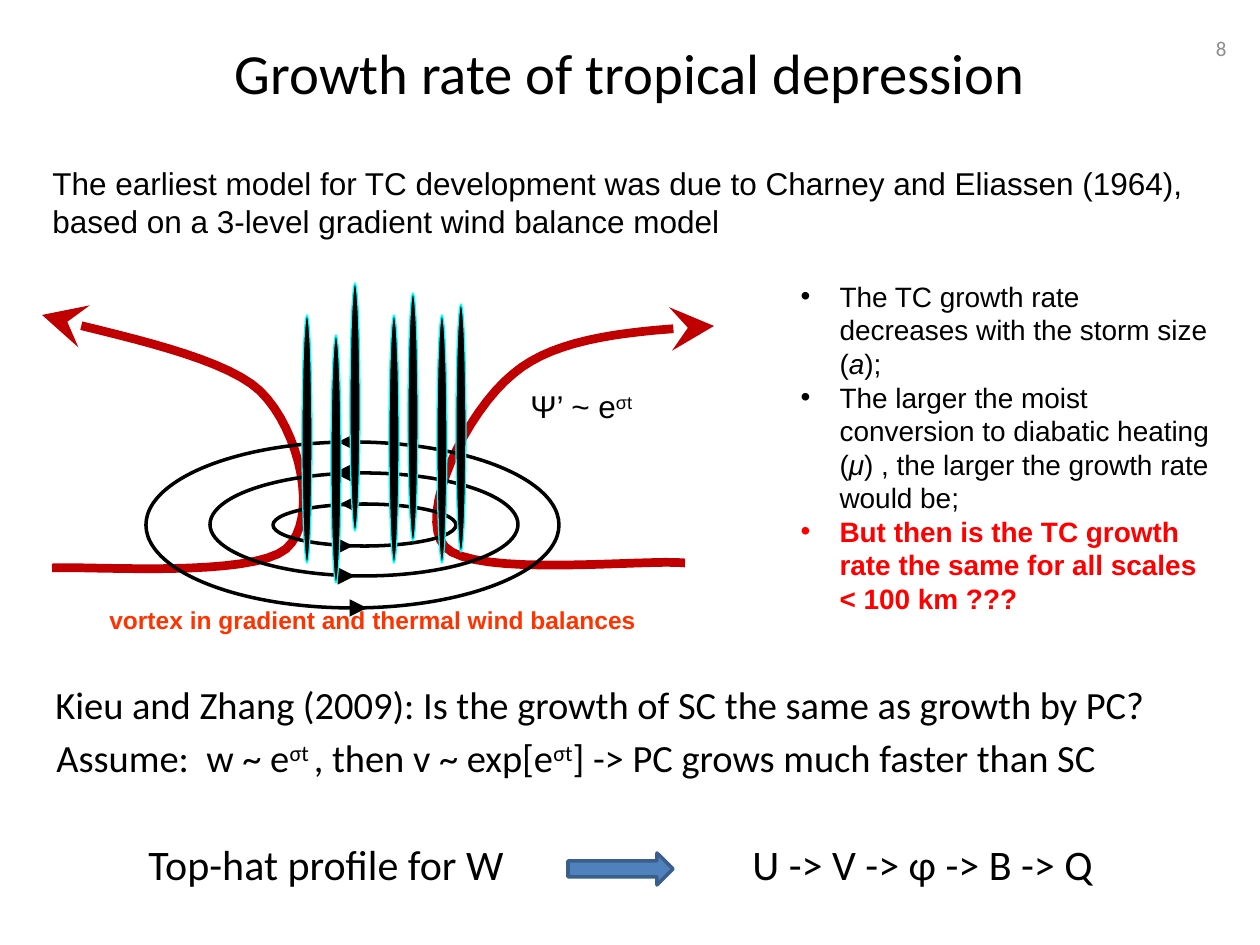
import pptx
import pptx.util
from lxml import etree
from pptx.dml.color import RGBColor
from pptx.enum.shapes import MSO_CONNECTOR, MSO_SHAPE
from pptx.enum.text import MSO_ANCHOR, PP_ALIGN
from pptx.oxml.ns import qn

PX = 914400 / 126
BLACK = RGBColor(0x00, 0x00, 0x00)
GRAY = RGBColor(0x8C, 0x8C, 0x8C)
DARK_RED = RGBColor(0xC0, 0x00, 0x00)
RED = RGBColor(0xFF, 0x00, 0x00)
ORANGE = RGBColor(0xFF, 0x33, 0x00)
CYAN = RGBColor(0x00, 0xFF, 0xFF)
BLUE = RGBColor(0x4F, 0x81, 0xBD)
NAVY = RGBColor(0x3A, 0x5F, 0x8C)

BODY = {"name": "Arial", "size": 18}
BULLET = {"name": "Arial", "size": 16}
QUESTION = BULLET | {"bold": True, "color": RED}
CAPTION = {"name": "Arial", "size": 14, "bold": True, "color": ORANGE}
STUDY = {"name": "Calibri", "size": 22}
PROFILE = {"name": "Calibri", "size": 24}
ITALIC = {"italic": True}
SUPERSCRIPT = {"superscript": True}

# Each stream is a start point followed by Bezier control points, in px.
INFLOW_RIGHT = [(685, 563), (646, 559), (474, 578), (445, 547), (416, 515),
                (467, 411), (513, 374), (557, 336), (635, 331), (714, 326)]
INFLOW_LEFT = [(52, 568), (91, 566), (251, 578), (286, 549), (320, 519),
               (300, 430), (260, 391), (219, 352), (87, 330), (42, 315)]
# Ring box, then the x ranges of its bottom and top arrows.
RINGS = [((146, 442, 413, 166), (346, 367), (357, 338)),
         ((210, 473, 308, 103), (341, 355), (348, 334)),
         ((273, 504, 183, 42), (344, 353), (349, 340))]
TOWERS = [(302, 315), (331, 335), (350, 283), (389, 315),
          (408, 293), (437, 315), (456, 304)]
TOWER_SIZE = (10, 248)


def emu(*lengths):
    return [pptx.util.Emu(round(length * PX)) for length in lengths]


def write_runs(paragraph, runs, base):
    """Add (text, format) pairs, each format laid over the base format."""
    for text, extra in runs:
        run = paragraph.add_run()
        run.text = text
        values = {"color": BLACK} | base | extra
        run.font.color.rgb = values.pop("color")
        if values.pop("superscript", False):
            run.font._element.set("baseline", "30000")
        values["size"] = pptx.util.Pt(values["size"])
        for name, value in values.items():
            setattr(run.font, name, value)


def place(holder, box):
    for name, value in zip(("left", "top", "width", "height"), emu(*box)):
        setattr(holder, name, value)


def add_text(slide, box, runs, base, align=PP_ALIGN.LEFT, anchor=MSO_ANCHOR.TOP):
    frame = slide.shapes.add_textbox(*emu(*box)).text_frame
    frame.word_wrap = True
    frame.vertical_anchor = anchor
    frame.paragraphs[0].alignment = align
    write_runs(frame.paragraphs[0], runs, base)


def fill_title(slide, text):
    title = slide.shapes.title
    place(title, (63, 38, 1134, 67))
    title.text_frame.vertical_anchor = MSO_ANCHOR.MIDDLE
    paragraph = title.text_frame.paragraphs[0]
    paragraph.alignment = PP_ALIGN.CENTER
    write_runs(paragraph, [(text, {})], {"name": "Calibri", "size": 32.4})


def fill_bullets(slide, box, items):
    body = slide.placeholders[1]
    place(body, box)
    frame = body.text_frame
    for index, (runs, base) in enumerate(items):
        paragraph = frame.add_paragraph() if index else frame.paragraphs[0]
        paragraph.space_before = pptx.util.Pt(0)
        indent = emu(39)[0]
        properties = paragraph._p.get_or_add_pPr()
        properties.set("marL", str(indent))
        properties.set("indent", str(-indent))
        write_runs(paragraph, runs, base)


def style_line(line, color, width, head=None):
    line.color.rgb = color
    line.width = pptx.util.Pt(width)
    if head:
        etree.SubElement(line._get_or_add_ln(), qn("a:tailEnd"),
                         type=head, w="lg", len="lg")


def add_shape(slide, kind, box, fill, color, width):
    shape = slide.shapes.add_shape(kind, *emu(*box))
    shape.shadow.inherit = False
    if fill is None:
        shape.fill.background()
    else:
        shape.fill.solid()
        shape.fill.fore_color.rgb = fill
    style_line(shape.line, color, width)


def bezier_points(controls, steps=16):
    """Sample joined cubic Bezier segments, leaving out the start point."""
    for first in range(0, len(controls) - 1, 3):
        segment = controls[first:first + 4]
        for step in range(1, steps + 1):
            t = step / steps
            weights = ((1 - t) ** 3, 3 * t * (1 - t) ** 2,
                       3 * t ** 2 * (1 - t), t ** 3)
            yield tuple(sum(w * p[axis] for w, p in zip(weights, segment))
                        for axis in (0, 1))


def add_stream(slide, controls):
    builder = slide.shapes.build_freeform(*emu(*controls[0]), scale=1.0)
    builder.add_line_segments([emu(*point) for point in bezier_points(controls)],
                              close=False)
    stream = builder.convert_to_shape()
    stream.shadow.inherit = False
    stream.fill.background()
    style_line(stream.line, DARK_RED, 5, "stealth")


def add_wind_arrow(slide, x_range, y):
    start, end = x_range
    arrow = slide.shapes.add_connector(MSO_CONNECTOR.STRAIGHT,
                                       *emu(start, y, end, y))
    style_line(arrow.line, BLACK, 0.75, "triangle")
    etree.SubElement(arrow._element.spPr, qn("a:effectLst"))


def draw_vortex(slide):
    for controls in (INFLOW_RIGHT, INFLOW_LEFT):
        add_stream(slide, controls)
    for box, bottom_arrow, top_arrow in RINGS:
        add_shape(slide, MSO_SHAPE.OVAL, box, None, BLACK, 2)
        add_wind_arrow(slide, bottom_arrow, box[1] + box[3])
        add_wind_arrow(slide, top_arrow, box[1])
    add_text(slide, (97, 599, 606, 39),
             [("vortex in gradient and thermal wind balances", {})], CAPTION)
    for tower in TOWERS:
        add_shape(slide, MSO_SHAPE.OVAL, tower + TOWER_SIZE, BLACK, CYAN, 0.75)
    add_text(slide, (518, 381, 155, 43),
             [("Ψ’ ~ e", {}), ("σt", SUPERSCRIPT)], BODY)


def main():
    deck = pptx.Presentation()
    deck.slide_width, deck.slide_height = emu(1260, 945)
    slide = deck.slides.add_slide(deck.slide_layouts[1])

    fill_title(slide, "Growth rate of tropical depression")
    add_text(slide, (40, 158, 1187, 89),
             [("The earliest model for TC development was due to Charney and "
               "Eliassen (1964), based on a 3-level gradient wind balance model",
               {})], BODY)
    draw_vortex(slide)
    fill_bullets(slide, (788, 273, 440, 364), [
        ([("The TC growth rate decreases with the storm size (", {}),
          ("a", ITALIC), (");", {})], BULLET),
        ([("The larger the moist conversion to diabatic heating (", {}),
          ("μ", ITALIC), (") , the larger the growth rate would be;", {})], BULLET),
        ([("But then is the TC growth rate the same for all scales < 100 km ???",
           {})], QUESTION)])
    add_text(slide, (43, 675, 1227, 59),
             [("Kieu and Zhang (2009): Is the growth of SC the same as growth "
               "by PC?", {})], STUDY)
    add_text(slide, (44, 728, 1215, 59),
             [("Assume:  w ~ e", {}), ("σt ", SUPERSCRIPT),
              (", then v ~ exp[e", {}), ("σt", SUPERSCRIPT),
              ("] -> PC grows much faster than SC", {})], STUDY)
    for left, text in ((136, "Top-hat profile for W"),
                       (740, "U -> V -> φ -> B -> Q")):
        add_text(slide, (left, 832, 386, 63), [(text, {})], PROFILE)
    add_shape(slide, MSO_SHAPE.RIGHT_ARROW, (568, 853, 105, 32), BLUE, NAVY, 2)
    add_text(slide, (945, 23, 294, 50), [("8", {})],
             {"name": "Calibri", "size": 12, "color": GRAY},
             PP_ALIGN.RIGHT, MSO_ANCHOR.MIDDLE)
    deck.save("out.pptx")


if __name__ == "__main__":
    main()
